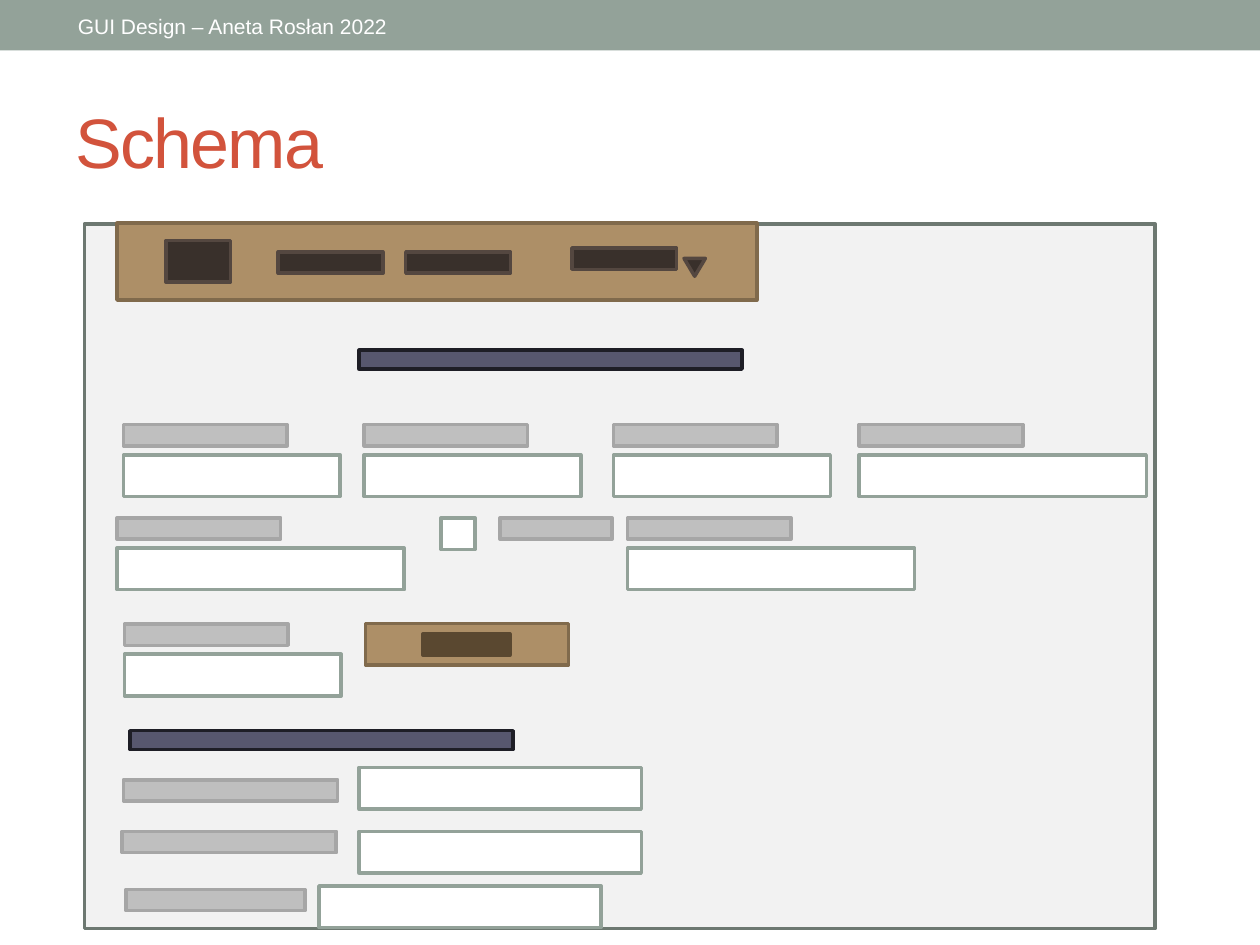
from pptx import Presentation, util as u
from pptx.dml.color import RGBColor
from pptx.enum import shapes, text

WHITE, SAGE = "FFFFFF", "93A299"
INPUT = (WHITE, SAGE)
LABEL = ("BFBFBF", "A6A6A6")
BAR = ("AD8F67", "806A4C")
MENU = ("39302B", "544740")
HEADING = ("57576E", "1E1E26")
BUTTON_TEXT = ("5A4830", "5A4830")
LABEL_HEIGHT, INPUT_HEIGHT = 0.43, 0.84

presentation = Presentation()
presentation.slide_width, presentation.slide_height = u.Cm(25.4), u.Cm(19.05)
slide = presentation.slides.add_slide(presentation.slide_layouts[6])


def add_block(left, top, width, height, colors, kind=shapes.MSO_SHAPE.RECTANGLE):
    """Add a wireframe block; colors is (fill, line), with None for no line."""
    shape = slide.shapes.add_shape(kind, u.Cm(left), u.Cm(top), u.Cm(width), u.Cm(height))
    fill, line = colors
    shape.shadow.inherit = False
    shape.fill.solid()
    shape.fill.fore_color.rgb = RGBColor.from_string(fill)
    if line:
        shape.line.color.rgb = RGBColor.from_string(line)
        shape.line.width = u.Pt(2)
    else:
        shape.line.fill.background()


def add_text(left, top, width, height, wording, size, color):
    box = slide.shapes.add_textbox(u.Cm(left), u.Cm(top), u.Cm(width), u.Cm(height))
    frame = box.text_frame
    frame.word_wrap = True
    frame.vertical_anchor = text.MSO_ANCHOR.MIDDLE
    frame.text = wording
    run = frame.paragraphs[0].runs[0]
    run.font.name = "Arial"
    run.font.size = u.Pt(size)
    run.font.color.rgb = RGBColor.from_string(color)
    return run


# Header band, title and page frame
add_block(0, 0, 25.4, 1.02, (SAGE, None))
add_text(1.32, 0.15, 8, 0.76, "GUI Design – Aneta Rosłan 2022", 12, WHITE)
add_block(1.7, 4.52, 21.59, 14.2, ("F2F2F2", "6D7871"))
title = add_text(1.27, 1.47, 22.86, 2.74, "Schema", 40, "D2533C")
title.font._element.set("spc", "-100")

# Navigation bar with logo block, menu items and drop-down arrow
add_block(2.36, 4.5, 12.9, 1.55, BAR)
add_block(3.35, 4.85, 1.3, 0.84, MENU)
for left, top in ((5.61, 5.08), (8.18, 5.08), (11.53, 5)):
    add_block(left, top, 2.11, LABEL_HEIGHT, MENU)
add_block(13.79, 5.21, 0.43, 0.36, MENU, shapes.MSO_SHAPE.FLOWCHART_MERGE)

# Section headings
for left, top in ((7.24, 7.06), (2.62, 14.73)):
    add_block(left, top, 7.72, 0.38, HEADING)

# Form fields: a label above its input
for left, top, input_width in (
    (2.49, 8.56, 4.37), (7.34, 8.56, 4.37), (12.37, 8.56, 4.37), (17.32, 8.56, 5.79),
    (2.36, 10.44, 5.79), (12.65, 10.44, 5.79),
    (2.51, 12.58, 4.37),
):
    add_block(left, top, 3.3, LABEL_HEIGHT, LABEL)
    add_block(left, top + 0.61, input_width, INPUT_HEIGHT, INPUT)

# Checkbox with its label
add_block(8.89, 10.44, 0.69, 0.64, INPUT)
add_block(10.08, 10.44, 2.26, LABEL_HEIGHT, LABEL)

# Button
add_block(7.37, 12.57, 4.09, INPUT_HEIGHT, BAR)
add_block(8.53, 12.78, 1.75, LABEL_HEIGHT, BUTTON_TEXT)

# Summary rows: a label beside its input
for label_left, label_top, label_width, input_left, input_top in (
    (2.49, 15.72, 4.32, 7.24, 15.47),
    (2.46, 16.76, 4.32, 7.24, 16.76),
    (2.54, 17.93, 3.61, 6.43, 17.86),
):
    add_block(label_left, label_top, label_width, LABEL_HEIGHT, LABEL)
    add_block(input_left, input_top, 5.69, INPUT_HEIGHT, INPUT)

presentation.save("out.pptx")
